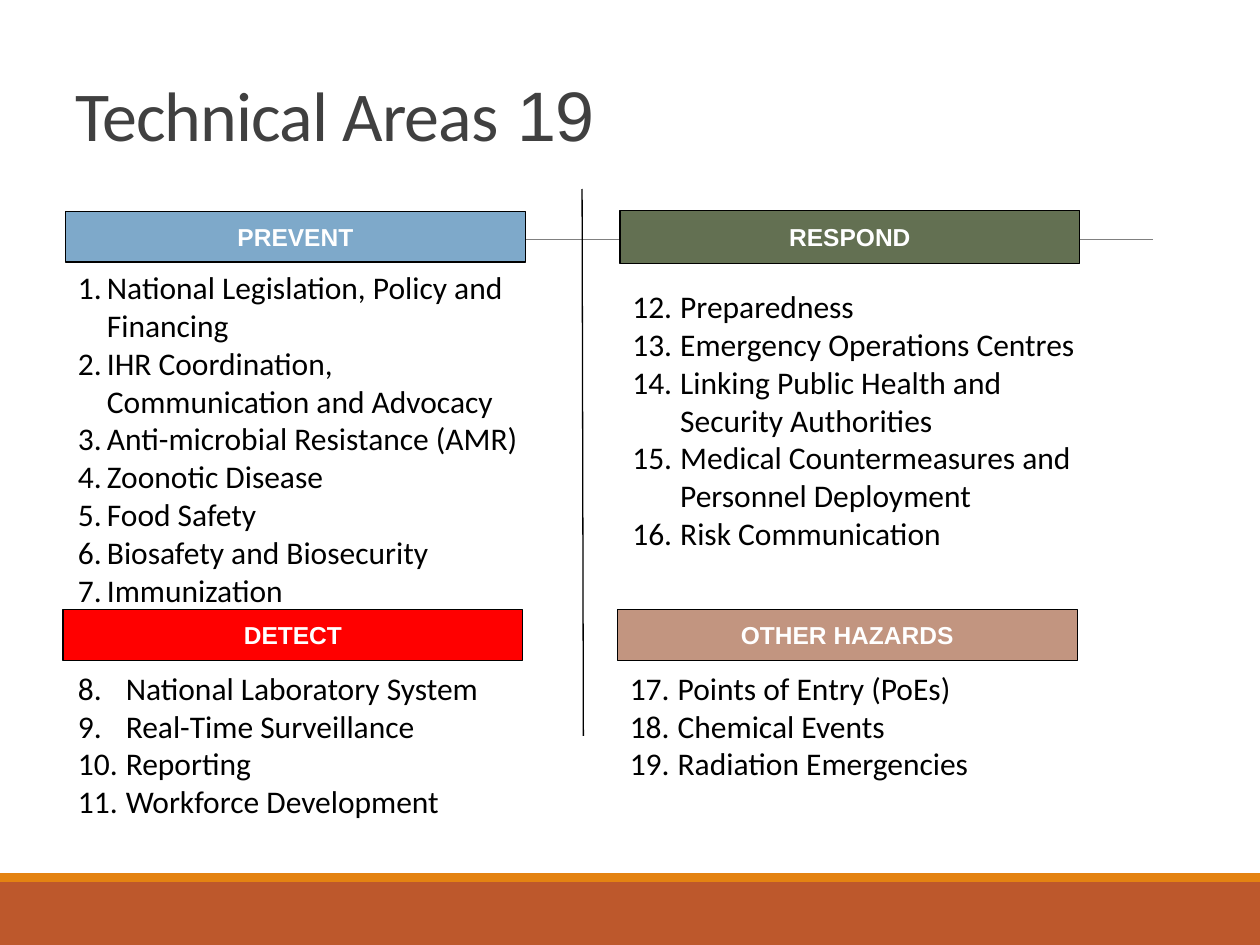
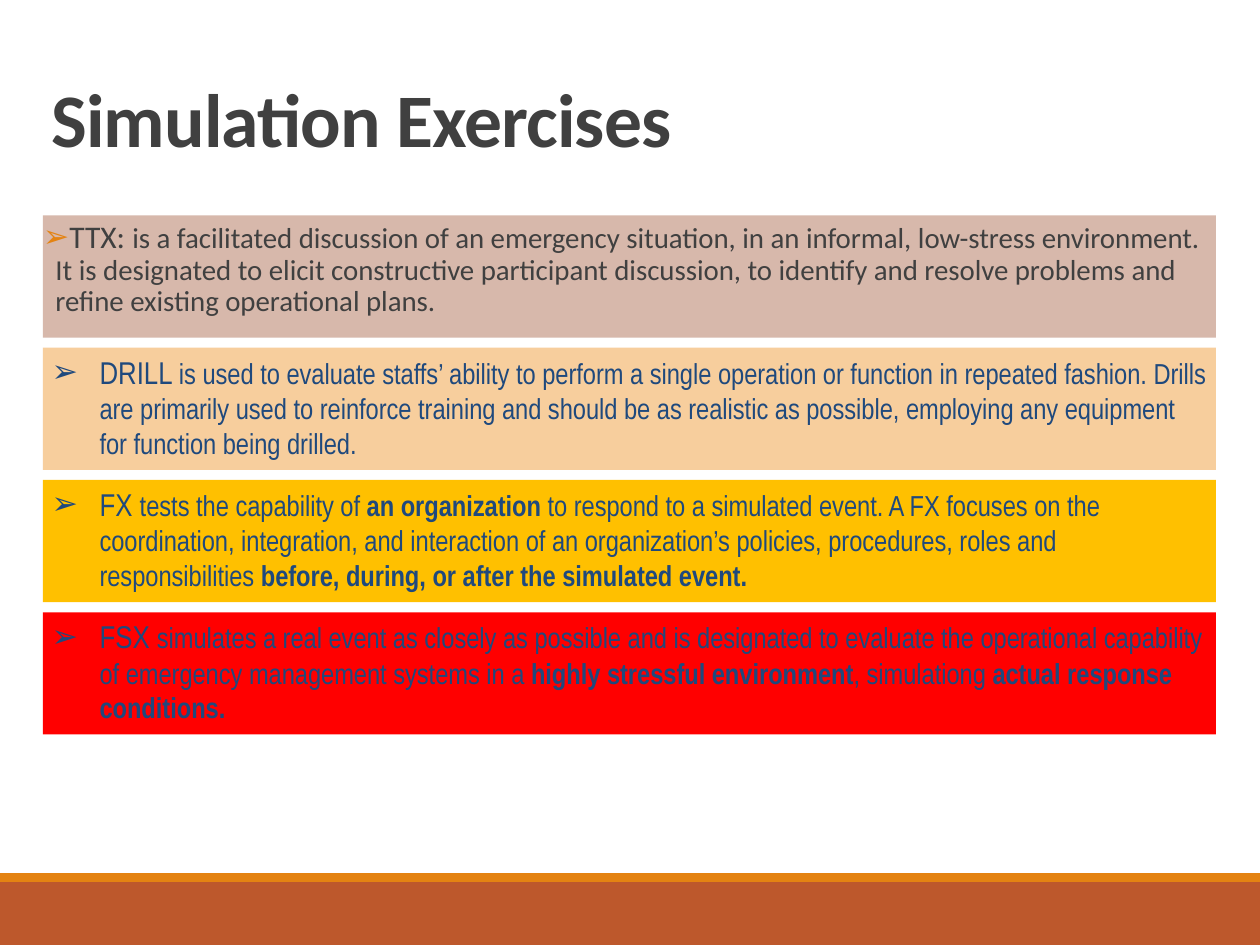
from dataclasses import dataclass
from lxml.etree import SubElement
from pptx import Presentation
from pptx.dml.color import RGBColor
from pptx.enum.shapes import MSO_CONNECTOR, MSO_SHAPE
from pptx.enum.text import MSO_ANCHOR, PP_ALIGN
from pptx.oxml.ns import qn
from pptx.util import Inches, Pt


@dataclass(frozen=True)
class Theme:
    """Colours, fonts and type sizes of the deck."""
    rust: str = "BD582C"
    orange: str = "E48312"
    grey: str = "808080"
    ink: str = "404040"
    black: str = "000000"
    white: str = "FFFFFF"
    navy: str = "1F497D"
    blue: str = "7EA9CA"
    green: str = "637052"
    red: str = "FF0000"
    tan: str = "C29580"
    blush: str = "D7B8AB"
    peach: str = "F7CE9D"
    gold: str = "FFC000"
    sans: str = "Calibri"
    plain: str = "Arial"
    thin: str = "Arial Narrow"
    head: float = 40
    big: float = 43.2
    lead: float = 18
    body: float = 16.5
    label: float = 14


T = Theme()
PANELS = [
    ((0.52, 1.68, 3.65, 0.4), "PREVENT", T.blue, 1, 0.23, (0, 0.4, 3.85, 2.8), [
        "National Legislation, Policy and Financing",
        "IHR Coordination, Communication and Advocacy",
        "Anti-microbial Resistance (AMR)", "Zoonotic Disease",
        "Food Safety", "Biosafety and Biosecurity", "Immunization"]),
    ((0.5, 4.84, 3.65, 0.4), "DETECT", T.red, 8, 0.38, (0.02, 0.42, 3.86, 1.3), [
        "National Laboratory System", "Real-Time Surveillance",
        "Reporting", "Workforce Development"]),
    ((4.92, 1.67, 3.65, 0.42), "RESPOND", T.green, 12, 0.38, (0, 0.56, 3.81, 2.2), [
        "Preparedness", "Emergency Operations Centres",
        "Linking Public Health and Security Authorities",
        "Medical Countermeasures and Personnel Deployment",
        "Risk Communication"]),
    ((4.9, 4.84, 3.65, 0.4), "OTHER HAZARDS", T.tan, 17, 0.38, (0, 0.42, 3.85, 1), [
        "Points of Entry (PoEs)", "Chemical Events", "Radiation Emergencies"]),
]
DRILLS = [
    (T.blush, "TTX: ", "is a facilitated discussion of an emergency situation, in an "
     "informal, low-stress environment. It is designated to elicit constructive "
     "participant discussion, to identify and resolve problems and refine existing "
     "operational plans."),
    (T.peach, "DRILL ", "is used to evaluate staffs’ ability to perform a single "
     "operation or function in repeated fashion. Drills are primarily used to "
     "reinforce training and should be as realistic as possible, employing any "
     "equipment for function being drilled."),
    (T.gold, "FX ", "tests the capability of *an organization *to respond to a "
     "simulated event. A FX focuses on the coordination, integration, and interaction "
     "of an organization’s policies, procedures, roles and responsibilities *before, "
     "during, or after the simulated event."),
    (T.red, "FSX ", "simulates a real event as closely as possible and is designated "
     "to evaluate the operational capability of emergency management systems in a "
     "*highly stressful environment*, simulationg *actual response conditions."),
]


def assign(item, form):
    """Set each attribute named in a dict."""
    for name, value in form.items():
        setattr(item, name, value)


def inch(box):
    """Turn a tuple of numbers into lengths."""
    return [Inches(n) for n in box]


def pad(frame, side, top):
    """Set the insets of a text frame."""
    assign(frame, {"margin_left": Inches(side), "margin_right": Inches(side),
                   "margin_top": Inches(top), "margin_bottom": Inches(top)})


def write(para, text, size, face, color, bold=False):
    """Add a styled run and return it."""
    run = para.add_run()
    run.text = text
    assign(run.font, {"size": Pt(size), "name": face, "bold": bold})
    run.font.color.rgb = RGBColor.from_string(color)
    return run


def block(slide, box, fill, edge=None):
    """Draw a flat rectangle."""
    shape = slide.shapes.add_shape(MSO_SHAPE.RECTANGLE, *inch(box))
    shape.shadow.inherit = False
    shape.fill.solid()
    shape.fill.fore_color.rgb = RGBColor.from_string(fill)
    if edge:
        shape.line.color.rgb = RGBColor.from_string(edge)
        shape.line.width = Pt(0.75)
    else:
        shape.line.fill.background()
    return shape


def rule(slide, ends, color, width):
    """Draw a straight line."""
    line = slide.shapes.add_connector(MSO_CONNECTOR.STRAIGHT, *inch(ends))
    line.line.color.rgb = RGBColor.from_string(color)
    line.line.width = Pt(width)
    SubElement(line._element.spPr, qn("a:effectLst"))


def textbox(slide, box):
    """Add a wrapping text box and return its frame."""
    frame = slide.shapes.add_textbox(*inch(box)).text_frame
    frame.word_wrap = True
    return frame


def bullet(para, hang, tag, attrs, color=None):
    """Give a paragraph a hanging mark."""
    props = para._p.get_or_add_pPr()
    props.set("marL", str(Inches(hang)))
    props.set("indent", str(-Inches(hang)))
    if color:
        SubElement(SubElement(props, qn("a:buClr")), qn("a:srgbClr"), val=color)
    SubElement(props, qn("a:buFont"), typeface=T.plain)
    SubElement(props, qn(tag), **attrs)


def footer(slide):
    """Draw the two bands at the foot."""
    block(slide, (0, 7, 10, 0.5), T.rust)
    block(slide, (0, 6.93, 10, 0.07), T.orange)


def title(slide, box, text, size, bold=False, rtl=False):
    """Write the slide title."""
    frame = textbox(slide, box)
    frame.vertical_anchor = MSO_ANCHOR.BOTTOM
    para = frame.paragraphs[0]
    assign(para, {"line_spacing": 0.85, "alignment": PP_ALIGN.LEFT})
    run = write(para, text, size, T.sans, T.ink, bold)
    run._r.rPr.set("spc", "-50")
    if rtl:
        para._p.get_or_add_pPr().set("rtl", "1")
        SubElement(run._r.rPr, qn("a:cs"), typeface=T.plain)


def panel(slide, box, name, fill, start, hang, area, items):
    """Draw a label with its numbered list below."""
    left, top = box[:2]
    dx, dy, wide, high = area
    frame = textbox(slide, (left + dx, top + dy, wide, high))
    for num, item in enumerate(items):
        para = frame.add_paragraph() if num else frame.paragraphs[0]
        write(para, item, T.lead, T.sans, T.black)
        bullet(para, hang, "a:buAutoNum",
               {"type": "arabicPeriod", "startAt": str(start)})
    frame = block(slide, box, fill, T.black).text_frame
    pad(frame, 0.05, 0.05)
    frame.vertical_anchor = MSO_ANCHOR.MIDDLE
    para = frame.paragraphs[0]
    para.alignment = PP_ALIGN.CENTER
    write(para, name, T.label, T.plain, T.white, True)


def drill(slide, box, fill, name, text, first):
    """Draw a filled box about one kind of exercise."""
    frame = block(slide, box, fill).text_frame
    frame.word_wrap = True
    frame.vertical_anchor = MSO_ANCHOR.TOP
    para = frame.paragraphs[0]
    para.alignment = PP_ALIGN.LEFT
    if first:
        pad(frame, 0, 0.05)
        para.line_spacing = 0.9
        face, color, hang, mark = T.sans, T.ink, 0.1, T.orange
    else:
        pad(frame, 0.07, 0.04)
        face, color, hang, mark = T.thin, T.navy, 0.38, T.navy
    bullet(para, hang, "a:buChar", {"char": "➢"}, mark)
    write(para, name, T.lead, face, color)
    for num, part in enumerate(text.split("*")):
        write(para, part, T.body, face, color, num % 2 == 1)


def areas(slide):
    """Build the slide of technical areas."""
    footer(slide)
    rule(slide, (0.98, 1.9, 9.15, 1.9), T.grey, 0.5)
    title(slide, (0.5, 0.46, 9, 0.83), "19 Technical Areas", T.head, rtl=True)
    rule(slide, (4.62, 1.5, 4.63, 5.84), T.black, 0.75)
    for part in PANELS:
        panel(slide, *part)


def drills(slide):
    """Build the slide of simulation exercises."""
    footer(slide)
    title(slide, (0.31, 0.57, 9, 0.77), "Simulation Exercises", T.big, bold=True)
    for num, part in enumerate(DRILLS):
        drill(slide, (0.34, 1.71 + 1.05 * num, 9.31, 0.97), *part, num == 0)


def main():
    """Build and save the deck."""
    deck = Presentation()
    assign(deck, {"slide_width": Inches(10), "slide_height": Inches(7.5)})
    for build in (areas, drills):
        build(deck.slides.add_slide(deck.slide_layouts[6]))
    deck.save("out.pptx")


if __name__ == "__main__":
    main()
